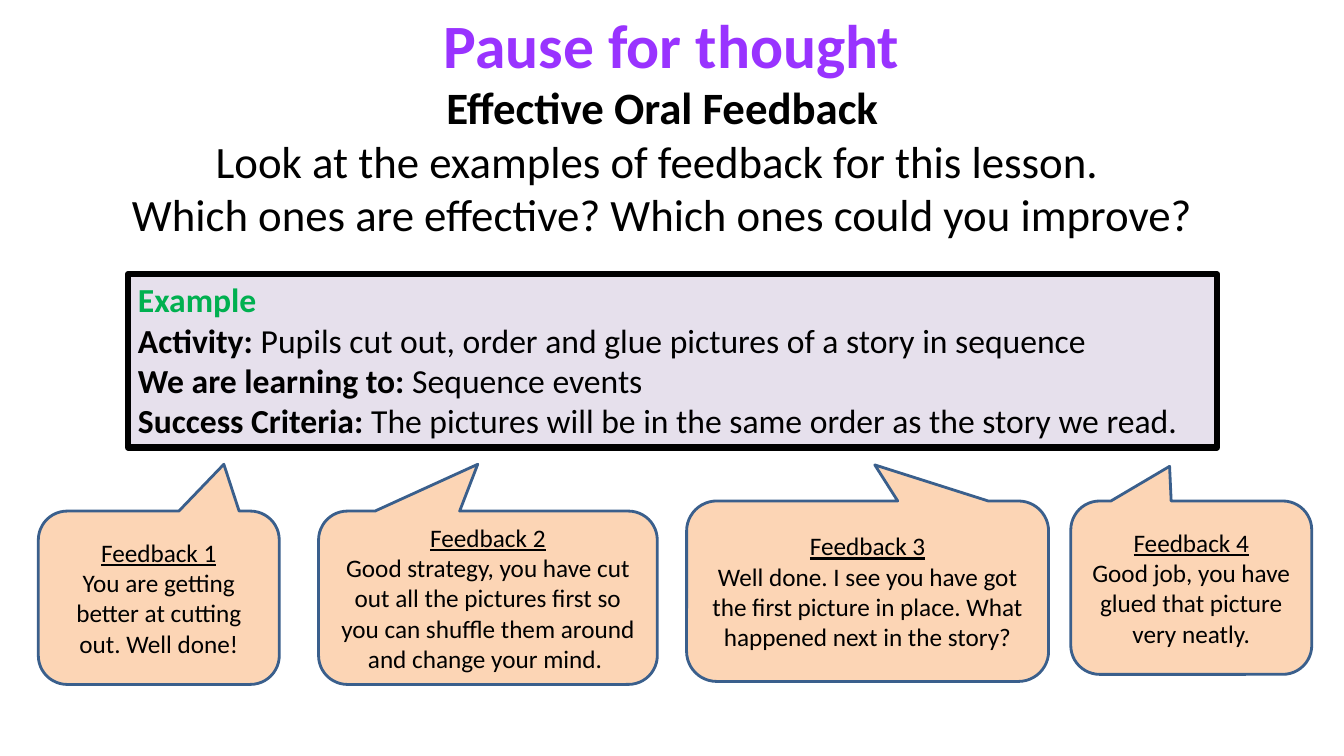
from dataclasses import dataclass

from pptx import Presentation
from pptx.dml.color import RGBColor
from pptx.enum.shapes import MSO_SHAPE
from pptx.enum.text import MSO_ANCHOR, MSO_AUTO_SIZE, PP_ALIGN
from pptx.oxml.ns import qn
from pptx.util import Inches, Pt


@dataclass(frozen=True)
class Theme:
    font: str = "Calibri"
    title_color: str = "9933FF"
    text_color: str = "000000"
    heading_color: str = "00B050"
    example_fill: str = "E6E0EC"
    callout_fill: str = "FCD5B5"
    callout_line: str = "3A5F8C"
    title_size: int = 44
    body_size: int = 32
    example_size: int = 24
    callout_size: int = 18


class FeedbackPage:
    def __init__(self, deck, theme):
        self.theme = theme
        self.page = deck.slides.add_slide(deck.slide_layouts[1])

    def place(self, box, left, top, width, height):
        box.left, box.top = Inches(left), Inches(top)
        box.width, box.height = Inches(width), Inches(height)

    def prepare(self, box, anchor):
        frame = box.text_frame
        frame.word_wrap = True
        frame.auto_size = MSO_AUTO_SIZE.NONE
        frame.vertical_anchor = anchor
        return frame

    def paragraph(self, frame, number, text, size, color=None, align=PP_ALIGN.CENTER):
        para = frame.paragraphs[0] if number == 0 else frame.add_paragraph()
        properties = para._p.get_or_add_pPr()
        properties.set("marL", "0")
        properties.set("indent", "0")
        properties.append(properties.makeelement(qn("a:buNone"), {}))
        para.alignment = align
        para.space_before = Pt(0)
        para.font.name = self.theme.font
        para.font.size = Pt(size)
        para.font.color.rgb = RGBColor.from_string(color or self.theme.text_color)
        if text:
            para.add_run().text = text
        return para

    def title(self, text, *bounds):
        box = self.page.shapes.title
        self.place(box, *bounds)
        frame = self.prepare(box, MSO_ANCHOR.TOP)
        para = self.paragraph(frame, 0, text, self.theme.title_size, self.theme.title_color)
        para.font.bold = True

    def body(self, lines, *bounds):
        box = self.page.placeholders[1]
        self.place(box, *bounds)
        frame = self.prepare(box, MSO_ANCHOR.TOP)
        for number, line in enumerate(lines):
            para = self.paragraph(frame, number, line, self.theme.body_size)
            para.font.bold = number == 0

    def panel(self, kind, bounds, fill, line, line_width):
        box = self.page.shapes.add_shape(kind, *map(Inches, bounds))
        box.shadow.inherit = False
        box.fill.solid()
        box.fill.fore_color.rgb = RGBColor.from_string(fill)
        box.line.color.rgb = RGBColor.from_string(line)
        box.line.width = Pt(line_width)
        return box

    def example(self, heading, details, *bounds):
        theme = self.theme
        box = self.panel(MSO_SHAPE.RECTANGLE, bounds, theme.example_fill, theme.text_color, 4.5)
        frame = self.prepare(box, MSO_ANCHOR.TOP)
        para = self.paragraph(
            frame, 0, heading, theme.example_size, theme.heading_color, PP_ALIGN.LEFT
        )
        para.font.bold = True
        for number, (label, detail) in enumerate(details, 1):
            para = self.paragraph(frame, number, "", theme.example_size, align=PP_ALIGN.LEFT)
            for text, bold in ((label, True), (" " + detail, False)):
                span = para.add_run()
                span.text = text
                span.font.bold = bold

    def callout(self, heading, comment, bounds, tip):
        theme = self.theme
        box = self.panel(
            MSO_SHAPE.ROUNDED_RECTANGULAR_CALLOUT,
            bounds,
            theme.callout_fill,
            theme.callout_line,
            2,
        )
        box.adjustments[0], box.adjustments[1] = tip
        frame = self.prepare(box, MSO_ANCHOR.MIDDLE)
        for number, text in enumerate((heading, comment)):
            para = self.paragraph(frame, number, text, theme.callout_size)
            para.font.underline = number == 0


def main():
    deck = Presentation()
    deck.slide_width, deck.slide_height = Inches(13.33), Inches(7.5)
    page = FeedbackPage(deck, Theme())
    page.title("Pause for thought", 0, 0.02, 13.33, 0.84)
    page.body(
        [
            "Effective Oral Feedback",
            "Look at the examples of feedback for this lesson. ",
            "Which ones are effective? Which ones could you improve?",
        ],
        0.89, 0.74, 11.36, 1.72,
    )
    page.example(
        "Example",
        [
            ("Activity:", "Pupils cut out, order and glue pictures of a story in sequence"),
            ("We are learning to:", "Sequence events"),
            (
                "Success Criteria:",
                "The pictures will be in the same order as the story we read.",
            ),
        ],
        1.27, 2.72, 10.8, 1.72,
    )
    feedback = [
        (
            "You are getting better at cutting out. Well done!",
            (0.38, 5.07, 2.39, 1.72),
            (0.27, -0.77),
        ),
        (
            "Good strategy, you have cut out all the pictures first so you can "
            "shuffle them around and change your mind. ",
            (3.16, 5.07, 3.36, 1.72),
            (-0.03, -0.77),
        ),
        (
            "Well done. I see you have got the first picture in place. "
            "What happened next in the story?",
            (6.81, 4.97, 3.59, 1.79),
            (0.02, -0.7),
        ),
        (
            "Good job, you have glued that picture very neatly.",
            (10.62, 4.97, 2.39, 1.72),
            (-0.09, -0.7),
        ),
    ]
    for number, (comment, bounds, tip) in enumerate(feedback, 1):
        page.callout(f"Feedback {number}", comment, bounds, tip)
    deck.save("out.pptx")


if __name__ == "__main__":
    main()
